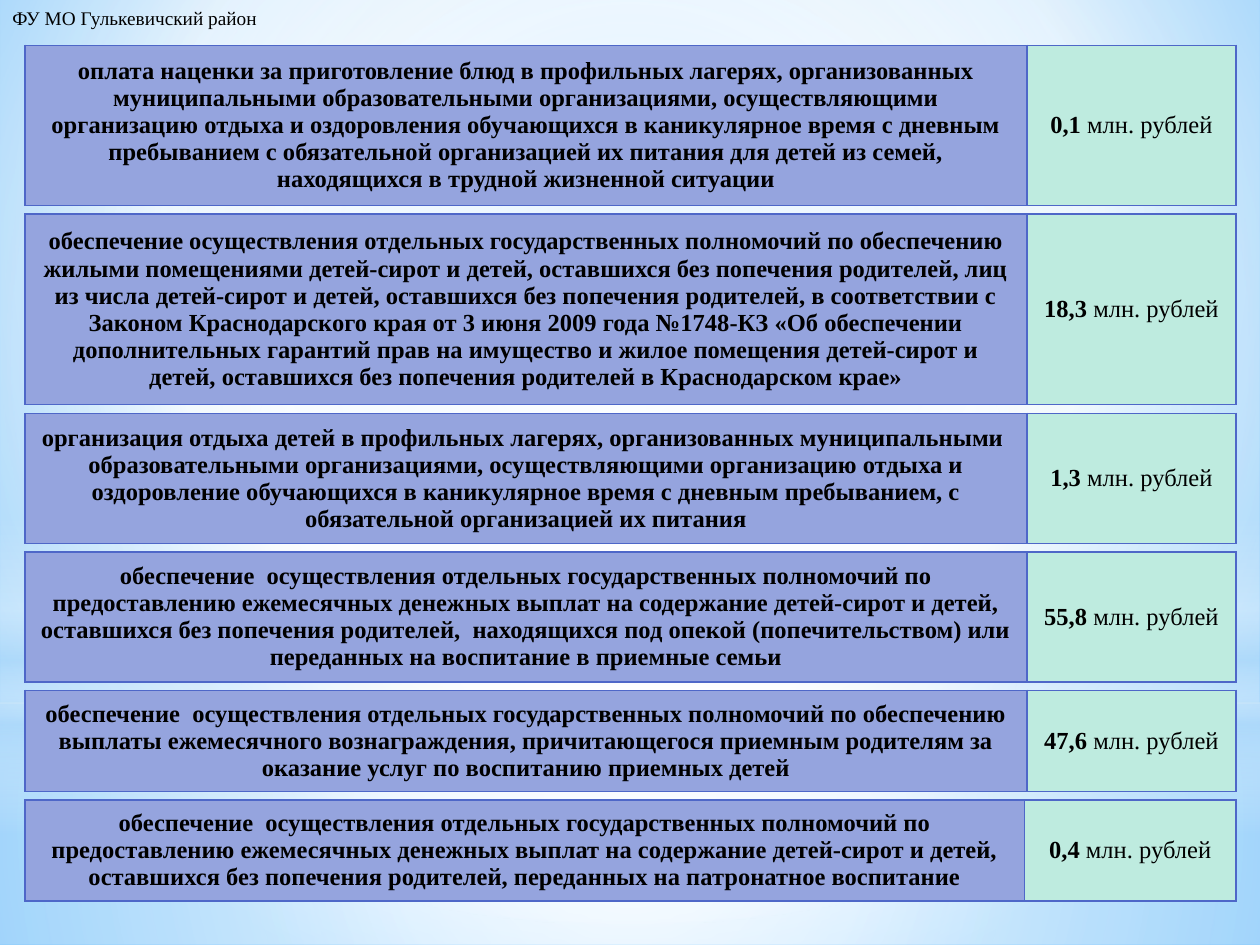
from lxml.etree import SubElement
from pptx import Presentation
from pptx.dml.color import RGBColor
from pptx.enum.shapes import MSO_SHAPE
from pptx.enum.text import MSO_ANCHOR, PP_ALIGN
from pptx.oxml.ns import qn
from pptx.util import Inches, Pt


class Theme:
    font = "Times New Roman"
    text = "000000"
    label_fill = "95A4DE"
    value_fill = "BEEBDF"
    border = "4E67C8"
    border_width = Pt(1)
    header_size = Pt(11)
    cell_size = Pt(14)
    white = "FFFFFF"
    haze = "B4DCFA"
    sky = "9ED5FF"
    deep_sky = "5BB9FF"


UNIT = "млн. рублей"

# (height, label column width, label, amount)
EXPENSES = [
    (1.27, 7.95, "оплата наценки за приготовление блюд в профильных лагерях, организованных "
     "муниципальными образовательными организациями, осуществляющими организацию отдыха и "
     "оздоровления обучающихся в каникулярное время с дневным пребыванием с обязательной "
     "организацией их питания для детей из семей, находящихся в трудной жизненной ситуации", "0,1"),
    (1.51, 7.95, "обеспечение осуществления отдельных государственных полномочий по обеспечению "
     "жилыми помещениями детей-сирот и детей, оставшихся без попечения родителей, лиц из числа "
     "детей-сирот и детей, оставшихся без попечения родителей, в соответствии с Законом "
     "Краснодарского края от 3 июня 2009 года №1748-КЗ «Об обеспечении дополнительных гарантий "
     "прав на имущество и жилое помещения детей-сирот и детей, оставшихся без попечения "
     "родителей в Краснодарском крае»", "18,3"),
    (1.03, 7.95, "организация отдыха детей в профильных лагерях, организованных муниципальными  "
     "образовательными организациями, осуществляющими организацию отдыха и оздоровление "
     "обучающихся в каникулярное время с дневным пребыванием, с обязательной организацией "
     "их питания", "1,3"),
    (1.03, 7.95, "обеспечение  осуществления отдельных государственных полномочий по "
     "предоставлению ежемесячных денежных выплат на содержание детей-сирот и детей, оставшихся "
     "без попечения родителей,  находящихся под опекой (попечительством) или переданных на "
     "воспитание в приемные семьи", "55,8"),
    (0.8, 7.95, "обеспечение  осуществления отдельных государственных полномочий по обеспечению "
     "выплаты ежемесячного вознаграждения, причитающегося приемным родителям за оказание услуг "
     "по воспитанию приемных детей", "47,6"),
    (0.8, 7.93, "обеспечение  осуществления отдельных государственных полномочий по "
     "предоставлению ежемесячных денежных выплат на содержание детей-сирот и детей, оставшихся "
     "без попечения родителей, переданных на патронатное воспитание", "0,4"),
]

CENTER = (50, 50, 50, 50)
# (shape, top, height, stops as (position, colour, opacity), focus or None for linear)
GLOWS = [
    (MSO_SHAPE.RECTANGLE, 5.58, 1.92,
     [(0, Theme.white, 91), (37, Theme.white, 76), (100, Theme.haze, 79)], CENTER),
    (MSO_SHAPE.RECTANGLE, 0, 5.58,
     [(0, Theme.white, 89), (48, Theme.white, 62), (100, Theme.haze, 79)], CENTER),
    (MSO_SHAPE.RECTANGLE, 4.12, 2.5,
     [(0, Theme.white, 0), (29, Theme.white, 30), (45, Theme.haze, 40), (55, Theme.white, 26),
      (65, Theme.haze, 60), (100, Theme.white, 0)], None),
    (MSO_SHAPE.OVAL, 1.75, 5.58, [(0, Theme.white, 100), (56, Theme.white, 0)], CENTER),
]


def set_gradient(fill, parent, stops, focus):
    """Circular gradient around focus, or a vertical linear one without it."""
    fill.solid()
    fill.fore_color.rgb = RGBColor.from_string(Theme.white)
    solid = parent.find(qn("a:solidFill"))
    grad = SubElement(parent, qn("a:gradFill"), rotWithShape="1")
    parent.replace(solid, grad)
    gs_list = SubElement(grad, qn("a:gsLst"))
    for pos, color, opacity in stops:
        gs = SubElement(gs_list, qn("a:gs"), pos=str(pos * 1000))
        clr = SubElement(gs, qn("a:srgbClr"), val=color)
        if opacity < 100:
            SubElement(clr, qn("a:alpha"), val=str(opacity * 1000))
    if focus:
        circle = SubElement(grad, qn("a:path"), path="circle")
        sides = {side: str(v * 1000) for side, v in zip("ltrb", focus)}
        SubElement(circle, qn("a:fillToRect"), **sides)
    else:
        SubElement(grad, qn("a:lin"), ang="5400000", scaled="0")


def add_run(p, text, **fmt):
    r = p.add_run()
    r.text = text
    r.font.color.rgb = RGBColor.from_string(Theme.text)
    for name, value in {"name": Theme.font, **fmt}.items():
        setattr(r.font, name, value)


def add_backdrop(s, width):
    fill = s.background.fill
    fill.solid()
    stops = [(0, Theme.sky, 100), (60, Theme.white, 100), (100, Theme.deep_sky, 100)]
    set_gradient(fill, s.element.find(".//" + qn("p:bgPr")), stops, (20, 10, 20, 60))
    for kind, top, height, stops, focus in GLOWS:
        sp = s.shapes.add_shape(kind, 0, Inches(top), width, Inches(height))
        sp.shadow.inherit = False
        sp.line.fill.background()
        set_gradient(sp.fill, sp.element.spPr, stops, focus)


def add_header(s, left, top, width, height):
    tf = s.shapes.add_textbox(left, top, width, height).text_frame
    tf.word_wrap = False
    add_run(tf.paragraphs[0], "ФУ МО Гулькевичский район", size=Theme.header_size)


def style_cell(cell, color):
    tc_pr = cell._tc.get_or_add_tcPr()
    for side in ("lnL", "lnR", "lnT", "lnB"):
        ln = SubElement(tc_pr, qn("a:" + side), w=str(Theme.border_width))
        SubElement(SubElement(ln, qn("a:solidFill")), qn("a:srgbClr"), val=Theme.border)
    cell.fill.solid()
    cell.fill.fore_color.rgb = RGBColor.from_string(color)
    cell.vertical_anchor = MSO_ANCHOR.MIDDLE
    cell.text_frame.paragraphs[0].alignment = PP_ALIGN.CENTER


def add_expense(s, left, top, width, height, label_width, label, amount):
    table = s.shapes.add_table(1, 2, left, top, width, height).table
    table.first_row = table.horz_banding = False
    table.columns[0].width = label_width
    table.columns[1].width = width - label_width
    parts = [(Theme.label_fill, [(label, True)]),
             (Theme.value_fill, [(amount + " ", True), (UNIT, False)])]
    for cell, (color, runs) in zip(table.rows[0].cells, parts):
        style_cell(cell, color)
        for text, bold in runs:
            add_run(cell.text_frame.paragraphs[0], text, size=Theme.cell_size, bold=bold)


def add_expenses(s, left, top, width, gap):
    for height, label_width, label, amount in EXPENSES:
        add_expense(s, left, top, width, Inches(height), Inches(label_width), label, amount)
        top += Inches(height) + gap


def main():
    prs = Presentation()
    prs.slide_width, prs.slide_height = Inches(10), Inches(7.5)
    s = prs.slides.add_slide(prs.slide_layouts[6])
    add_backdrop(s, prs.slide_width)
    add_header(s, 0, 0, Inches(2.18), Inches(0.29))
    add_expenses(s, Inches(0.2), Inches(0.36), Inches(9.61), Inches(0.07))
    prs.save("out.pptx")


if __name__ == "__main__":
    main()
